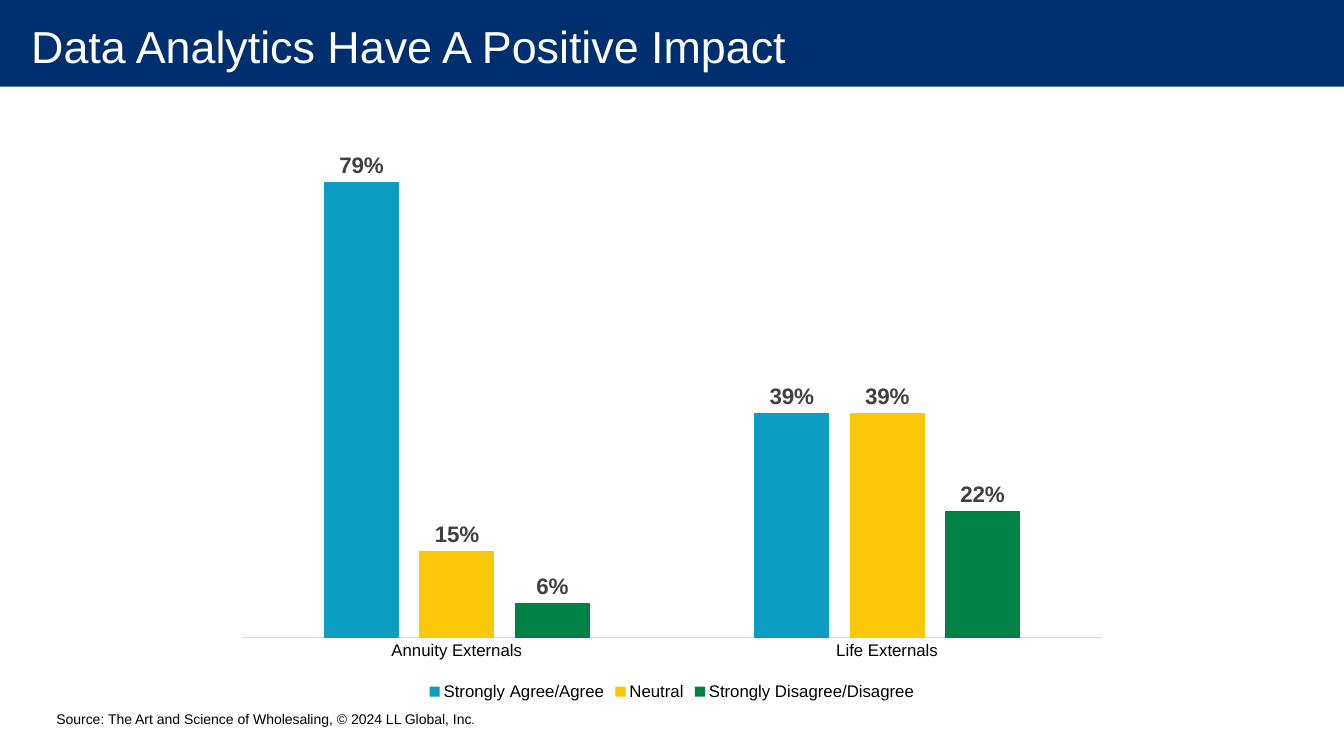
from dataclasses import dataclass

from pptx import Presentation
from pptx import util as u
from pptx.chart.data import CategoryChartData
from pptx.dml.color import RGBColor
from pptx.enum import chart as ch, shapes, text

FONT = "Arial"


@dataclass
class Answer:
    name: str
    shares: tuple[float, ...]
    color: str


GROUPS = ("Annuity Externals", "Life Externals")
ANSWERS = (
    Answer("Strongly Agree/Agree", (0.79, 0.39), "0B9EC1"),
    Answer("Neutral", (0.15, 0.39), "FAC809"),
    Answer("Strongly Disagree/Disagree", (0.06, 0.22), "008145"),
)


def rgb(value: str) -> RGBColor:
    return RGBColor.from_string(value)


def set_font(font, size: float, color: str = "000000", bold: bool = False) -> None:
    font.name = FONT
    font.size = u.Pt(size)
    font.bold = bold
    font.color.rgb = rgb(color)


def add_title(slide, title: str) -> None:
    """Draw the navy band and the title on it."""
    band = slide.shapes.add_shape(
        shapes.MSO_SHAPE.RECTANGLE, 0, 0, u.Inches(13.33), u.Inches(0.86))
    band.shadow.inherit = False
    band.fill.solid()
    band.fill.fore_color.rgb = rgb("002F70")
    band.line.fill.background()

    box = slide.shapes.add_textbox(
        u.Inches(0.01), u.Inches(-0.03), u.Inches(13.33), u.Inches(0.97))
    tf = box.text_frame
    tf.word_wrap = True
    tf.vertical_anchor = text.MSO_ANCHOR.MIDDLE
    tf.margin_left, tf.margin_right = u.Inches(0.3), u.Inches(0.2)
    tf.margin_top = tf.margin_bottom = 0
    p = tf.paragraphs[0]
    p.text = title
    set_font(p.font, 32, "FFFFFF")


def add_answer_chart(slide) -> None:
    data = CategoryChartData(number_format="0%")
    data.categories = GROUPS
    for answer in ANSWERS:
        data.add_series(answer.name, answer.shares)
    chart = slide.shapes.add_chart(
        ch.XL_CHART_TYPE.COLUMN_CLUSTERED, u.Inches(2.22), u.Inches(1.06),
        u.Inches(8.89), u.Inches(5.93), data).chart
    set_font(chart.font, 10)
    chart.has_title = False
    chart.has_legend = True
    chart.legend.position = ch.XL_LEGEND_POSITION.BOTTOM
    chart.legend.include_in_layout = False
    set_font(chart.legend.font, 12)

    groups = chart.category_axis
    groups.major_tick_mark = ch.XL_TICK_MARK.NONE
    groups.format.line.color.rgb = rgb("D9D9D9")
    groups.format.line.width = u.Pt(0.75)
    set_font(groups.tick_labels.font, 12)
    shares = chart.value_axis
    shares.visible = False
    shares.has_major_gridlines = False
    shares.minimum_scale, shares.maximum_scale = 0, 0.9

    plot = chart.plots[0]
    plot.vary_by_categories = False
    plot.gap_width, plot.overlap = 219, -27
    for series, answer in zip(plot.series, ANSWERS):
        series.format.fill.solid()
        series.format.fill.fore_color.rgb = rgb(answer.color)
        labels = series.data_labels
        labels.show_value = True
        labels.position = ch.XL_LABEL_POSITION.OUTSIDE_END
        labels.number_format = "0%"
        labels.number_format_is_linked = False
        set_font(labels.font, 16, "404040", bold=True)


def add_source(slide) -> None:
    box = slide.shapes.add_textbox(
        u.Inches(0.46), u.Inches(6.54), u.Inches(5.85), u.Inches(0.72))
    tf = box.text_frame
    tf.word_wrap = True
    tf.vertical_anchor = text.MSO_ANCHOR.BOTTOM
    p = tf.paragraphs[0]
    source = "Source: The Art and Science of Wholesaling, © 2024 LL Global, Inc"
    for words, size in ((source, 10), (".", 8)):
        r = p.add_run()
        r.text = words
        set_font(r.font, size)


def main() -> None:
    prs = Presentation()
    prs.slide_width, prs.slide_height = u.Inches(13.33), u.Inches(7.5)
    s = prs.slides.add_slide(prs.slide_layouts[6])
    add_title(s, "Data Analytics Have A Positive Impact")
    add_answer_chart(s)
    add_source(s)
    prs.save("out.pptx")


if __name__ == "__main__":
    main()
